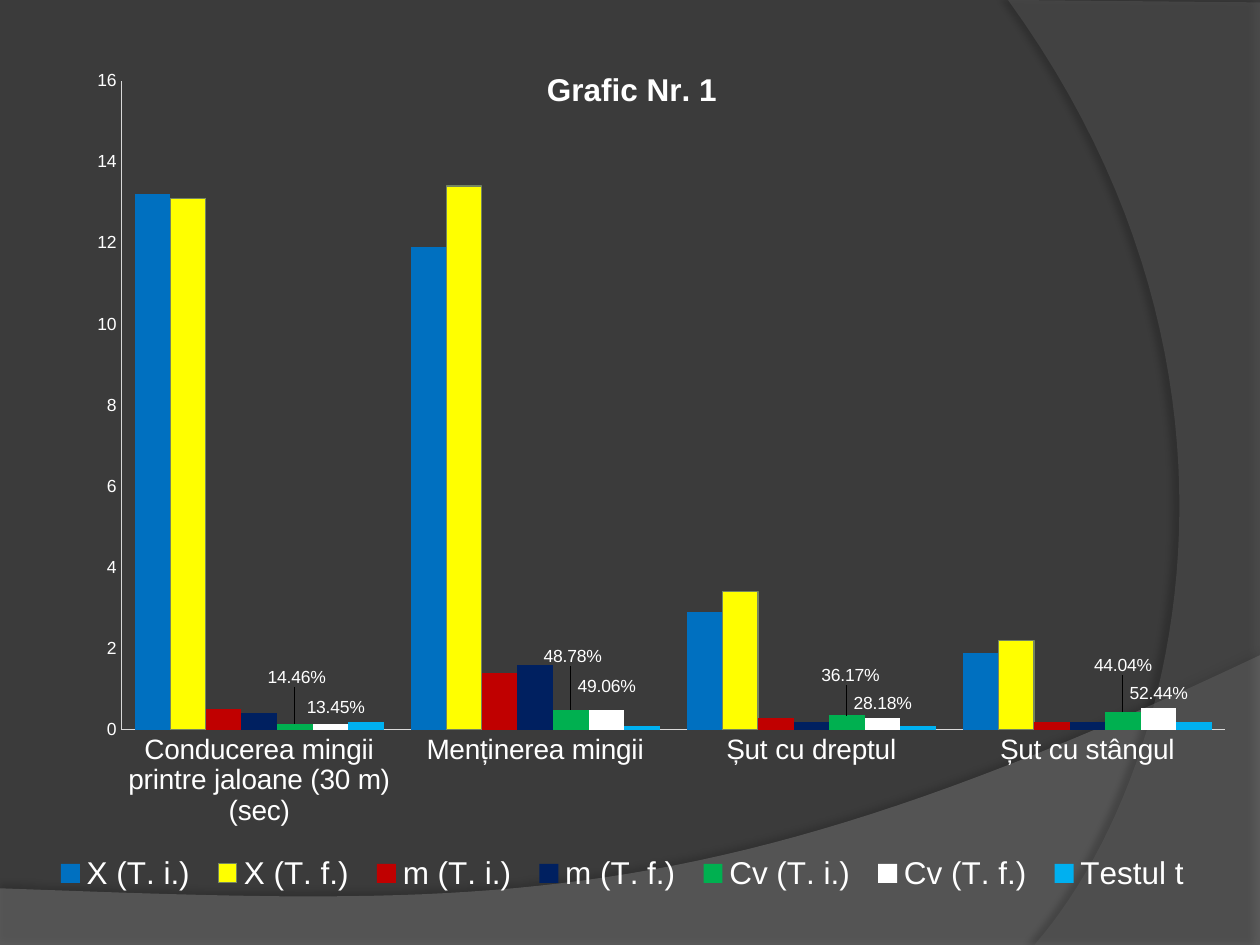
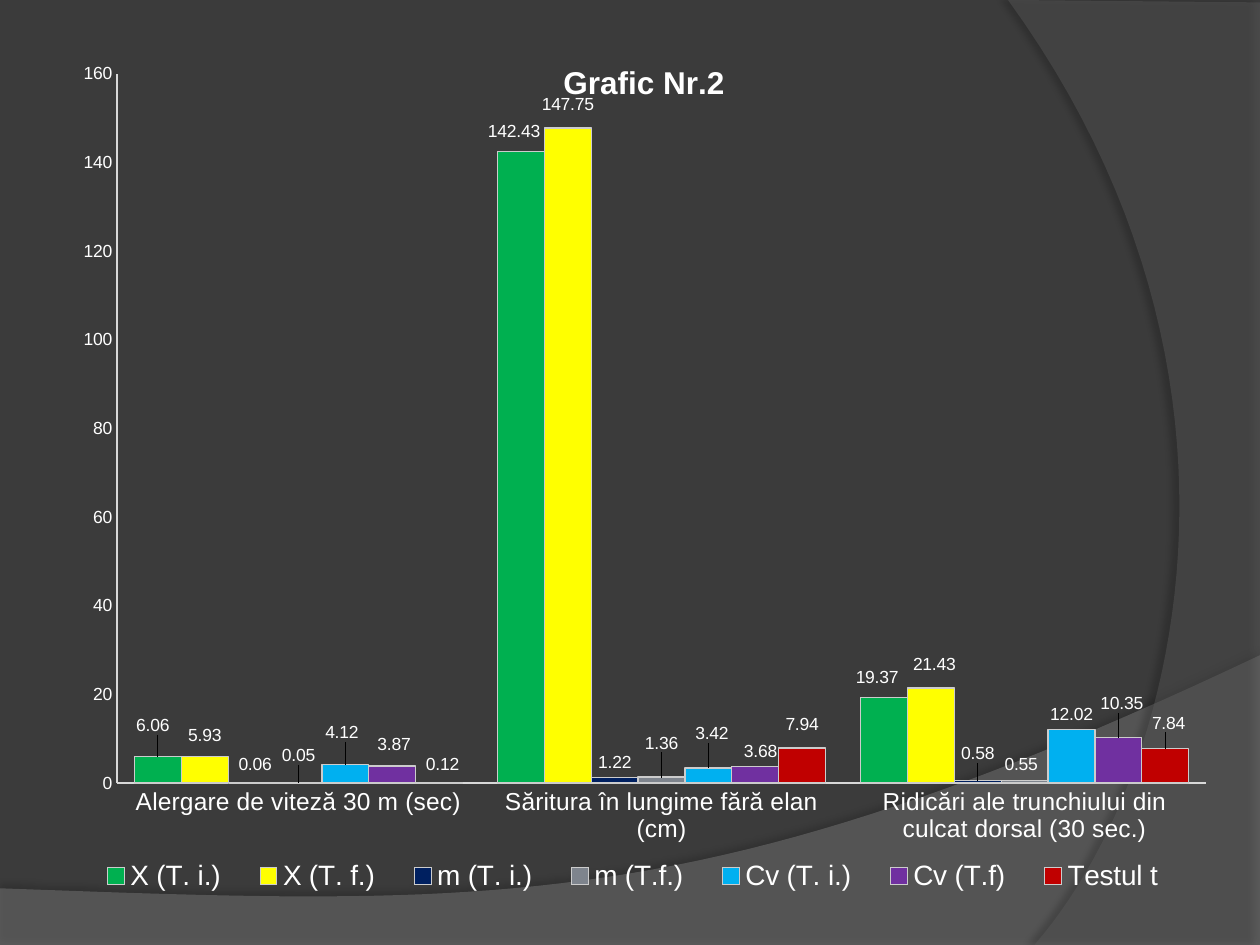
import pptx
import pptx.chart.data
import pptx.dml.color
import pptx.enum.chart
import pptx.oxml
import pptx.oxml.ns
import pptx.util
from pptx.util import Pt

COLORS = {
    "background": "3B3B3B", "wave": "7F7F7F", "curve": "5E5E5E",
    "shadow": "000000", "text": "FFFFFF", "axis": "D9D9D9",
    "blue": "0070C0", "yellow": "FFFF00", "red": "C00000", "navy": "002060",
    "green": "00B050", "white": "FFFFFF", "sky": "00B0F0", "gray": "7E848D",
    "purple": "7030A0", "olive": "748560", "outline": "CCCCCC",
}
FONT = "Arial"
NAMESPACES = pptx.oxml.ns.nsdecls("a", "c")

# Series: name, values, fill, outline, label offsets in points (None: no labels)
BALL_SKILLS = {
    "title": "Grafic Nr. 1",
    "box": (14.4, 20.9, 686.2, 504.7),
    "categories": ["Conducerea mingii printre jaloane (30 m) (sec)",
                   "Menținerea mingii", "Șut cu dreptul", "Șut cu stângul"],
    "maximum": 16, "step": 2, "category_size": 16, "legend_size": 18,
    "label_format": "0.00%",
    "title_at": (0.43, 0.03),
    "plot_at": (0.08, 0.05, 0.92, 0.735),
    "legend_at": (0.015, 0.925, 0.965, 0.045),
    "series": [
        ("X (T. i.)", (13.2, 11.9, 2.9, 1.9), "blue", None, None),
        ("X (T. f.)", (13.1, 13.4, 3.4, 2.2), "yellow", "olive", None),
        ("m (T. i.)", (0.5, 1.4, 0.3, 0.2), "red", None, None),
        ("m (T. f.)", (0.4, 1.6, 0.2, 0.2), "navy", None, None),
        ("Cv (T. i.)", (0.1446, 0.4878, 0.3617, 0.4404), "green", None,
         [(1, -18), (1, -22), (2, -14), (0, -18)]),
        ("Cv (T. f.)", (0.1345, 0.4906, 0.2818, 0.5244), "white", None,
         [(3, -1), (0, -5), (0, 0), (0, 0)]),
        ("Testul t", (0.2, 0.1, 0.1, 0.2), "sky", None, None),
    ],
}
MOTOR_TESTS = {
    "title": "Grafic Nr.2",
    "box": (20.2, 25.9, 686.2, 493.2),
    "categories": ["Alergare de viteză 30 m (sec)",
                   "Săritura în lungime fără elan (cm)",
                   "Ridicări ale trunchiului din culcat dorsal (30 sec.)"],
    "maximum": 160, "step": 20, "category_size": 14, "legend_size": 16,
    "label_format": "General",
    "title_at": (0.435, 0.013),
    "plot_at": (0.068, 0.033, 0.907, 0.822),
    "legend_at": (0.035, 0.94, 0.925, 0.045),
    "series": [
        ("X (T. i.)", (6.06, 142.43, 19.37), "green", "outline",
         [(-3, -9), (-4, -3), (-4, -3)]),
        ("X (T. f.)", (5.93, 147.75, 21.43), "yellow", "outline",
         [(0, -4), (0, -5), (2, -5)]),
        ("m (T. i.)", (0.06, 1.22, 0.58), "navy", "outline",
         [(2, -2), (0, 0), (0, -7)]),
        ("m (T.f.)", (0.05, 1.36, 0.55), "gray", "outline",
         [(0, -7), (0, -11), (-2, -1)]),
        ("Cv (T. i.)", (4.12, 3.42, 12.02), "sky", "outline",
         [(-2, -10), (2, -11), (0, 0)]),
        ("Cv (T.f)", (3.87, 3.68, 10.35), "purple", "outline",
         [(1, -4), (3, 0), (2, -11)]),
        ("Testul t", (0.12, 7.94, 7.84), "red", "outline",
         [(2, -2), (0, -5), (2, -6)]),
    ],
}


def rgb(name):
    return pptx.dml.color.RGBColor.from_string(COLORS[name])


def bezier(start, control_1, control_2, end, steps=48):
    """Return the points of a cubic curve after its start."""
    points = []
    for step in range(1, steps + 1):
        t = step / steps
        weights = ((1 - t) ** 3, 3 * t * (1 - t) ** 2, 3 * t * t * (1 - t), t ** 3)
        points.append(tuple(
            sum(weight * value for weight, value in zip(weights, values))
            for values in zip(start, control_1, control_2, end)))
    return points


def place(element, index, position, target="", edge=True):
    """Give a chart part a manual layout, in fractions of the chart."""
    for layout in element.xpath("c:layout"):
        element.remove(layout)
    parts = f'<c:layoutTarget val="{target}"/>' if target else ""
    if edge:
        parts += '<c:xMode val="edge"/><c:yMode val="edge"/>'
    parts += "".join(f'<c:{key} val="{value:.4f}"/>'
                     for key, value in zip("xywh", position))
    element.insert(index, pptx.oxml.parse_xml(
        f"<c:layout {NAMESPACES}><c:manualLayout>{parts}</c:manualLayout></c:layout>"))


class Deck:
    def __init__(self):
        self.presentation = pptx.Presentation()
        self.presentation.slide_width = Pt(720)
        self.presentation.slide_height = Pt(540)
        self.master = self.presentation.slide_master
        self.master.background.fill.solid()
        self.master.background.fill.fore_color.rgb = rgb("background")
        self.slide = None

    def add_slide(self):
        self.slide = self.presentation.slides.add_slide(
            self.presentation.slide_layouts.get_by_name("Blank"))

    def style_font(self, font, size, bold=False):
        font.name = FONT
        font.size = Pt(size)
        font.bold = bold
        font.color.rgb = rgb("text")

    def add_master_band(self, order, corners, controls, color, opacity, shadow):
        """Add a translucent band, closed by a curve, behind all slides."""
        points = corners + bezier(corners[-1], *controls)
        points = [(Pt(x), Pt(y)) for x, y in points]
        builder = self.slide.shapes.build_freeform(*points[0])
        builder.add_line_segments(points[1:], close=True)
        shape = builder.convert_to_shape()
        shape.fill.solid()
        shape.fill.fore_color.rgb = rgb(color)
        shape.line.fill.background()
        shape.shadow.inherit = False
        fill_color = shape.element.xpath("p:spPr/a:solidFill/a:srgbClr")[0]
        fill_color.append(pptx.oxml.parse_xml(
            f'<a:alpha {NAMESPACES} val="{opacity * 1000}"/>'))
        alpha, blur, distance, angle = shadow
        shape.element.xpath("p:spPr/a:effectLst")[0].append(pptx.oxml.parse_xml(
            f'<a:outerShdw {NAMESPACES} blurRad="{Pt(blur)}" dist="{Pt(distance)}" '
            f'dir="{angle * 60000}" algn="ctr" rotWithShape="0">'
            f'<a:srgbClr val="{COLORS["shadow"]}"><a:alpha val="{alpha * 1000}"/>'
            f'</a:srgbClr></a:outerShdw>'))
        shape.element.xpath("p:nvSpPr/p:cNvPr")[0].set("id", str(100 + order))
        self.master.shapes.element.insert(2 + order, shape.element)

    def add_column_chart(self, content):
        data = pptx.chart.data.CategoryChartData()
        data.categories = content["categories"]
        for name, values, _, _, offsets in content["series"]:
            data.add_series(name, values,
                            content["label_format"] if offsets else "General")
        chart = self.slide.shapes.add_chart(
            pptx.enum.chart.XL_CHART_TYPE.COLUMN_CLUSTERED,
            *map(Pt, content["box"]), data).chart
        self.style_font(chart.font, 10)
        chart.element.xpath("c:chart")[0].addnext(pptx.oxml.parse_xml(
            f"<c:spPr {NAMESPACES}><a:noFill/><a:ln><a:noFill/></a:ln></c:spPr>"))
        plot = chart.plots[0]
        plot.gap_width = 75
        plot.overlap = 0
        plot.vary_by_categories = False
        place(chart.element.xpath(".//c:plotArea")[0], 0, content["plot_at"], "inner")

        self.add_chart_title(chart, content)
        self.style_axes(chart, content)
        self.add_legend(chart, content)
        for number, (series, row) in enumerate(zip(plot.series, content["series"]), 1):
            _, _, fill, outline, offsets = row
            series.invert_if_negative = False
            series.format.fill.solid()
            series.format.fill.fore_color.rgb = rgb(fill)
            if outline:
                series.format.line.color.rgb = rgb(outline)
                series.format.line.width = Pt(0.75)
            else:
                series.format.line.fill.background()
            if offsets:
                self.add_value_labels(chart, series, number, offsets, content)

    def add_chart_title(self, chart, content):
        chart.has_title = True
        paragraph = chart.chart_title.text_frame.paragraphs[0]
        paragraph.text = content["title"]
        self.style_font(paragraph.font, 18, bold=True)
        title = chart.element.xpath("c:chart/c:title")[0]
        place(title, 1, content["title_at"])
        title.xpath("c:overlay")[0].set("val", "1")

    def style_axes(self, chart, content):
        sizes = {chart.category_axis: content["category_size"], chart.value_axis: 10}
        for axis, size in sizes.items():
            axis.has_major_gridlines = False
            axis.major_tick_mark = pptx.enum.chart.XL_TICK_MARK.NONE
            axis.minor_tick_mark = pptx.enum.chart.XL_TICK_MARK.NONE
            axis.format.line.color.rgb = rgb("axis")
            axis.format.line.width = Pt(0.75)
            self.style_font(axis.tick_labels.font, size)
        axis = chart.value_axis
        axis.minimum_scale = 0
        axis.maximum_scale = content["maximum"]
        axis.major_unit = content["step"]
        axis.tick_labels.number_format = "General"
        axis.tick_labels.number_format_is_linked = False

    def add_legend(self, chart, content):
        chart.has_legend = True
        legend = chart.legend
        legend.position = pptx.enum.chart.XL_LEGEND_POSITION.BOTTOM
        legend.include_in_layout = False
        self.style_font(legend.font, content["legend_size"])
        place(chart.element.xpath("c:chart/c:legend")[0], 1, content["legend_at"])

    def add_value_labels(self, chart, series, number, offsets, content):
        """Label the columns and shift labels by their offsets."""
        outside = pptx.enum.chart.XL_LABEL_POSITION.OUTSIDE_END
        labels = series.data_labels
        labels.show_value = True
        labels.number_format = content["label_format"]
        labels.number_format_is_linked = False
        labels.position = outside
        self.style_font(labels.font, 10)
        _, _, width, height = content["box"]
        for index, (x, y) in enumerate(offsets):
            if (x, y) == (0, 0):
                continue
            series.points[index].data_label.position = outside
            label = chart.element.xpath(
                f'.//c:ser[{number}]/c:dLbls/c:dLbl[c:idx/@val="{index}"]')[0]
            place(label, 1, (x / width, y / height), edge=False)
            label.insert(2, pptx.oxml.parse_xml(
                f'<c:numFmt {NAMESPACES} formatCode="{content["label_format"]}" '
                f'sourceLinked="0"/>'))


def main():
    deck = Deck()
    deck.add_slide()
    deck.add_master_band(
        0, [(0, 507.6), (0, 540.7), (720, 540.7), (720, 374.4)],
        [(402.5, 524.9), (281.5, 517.7), (0, 507.6)], "wave", 45, (35, 4, 3.5, 270))
    deck.add_master_band(
        1, [(720, 1.4), (720, 540), (591.1, 540)],
        [(673.2, 445.7), (733, 216), (576, 0)], "curve", 40, (45, 4, 4, 180))
    deck.add_column_chart(BALL_SKILLS)
    deck.add_slide()
    deck.add_column_chart(MOTOR_TESTS)
    deck.presentation.save("out.pptx")


if __name__ == "__main__":
    main()
